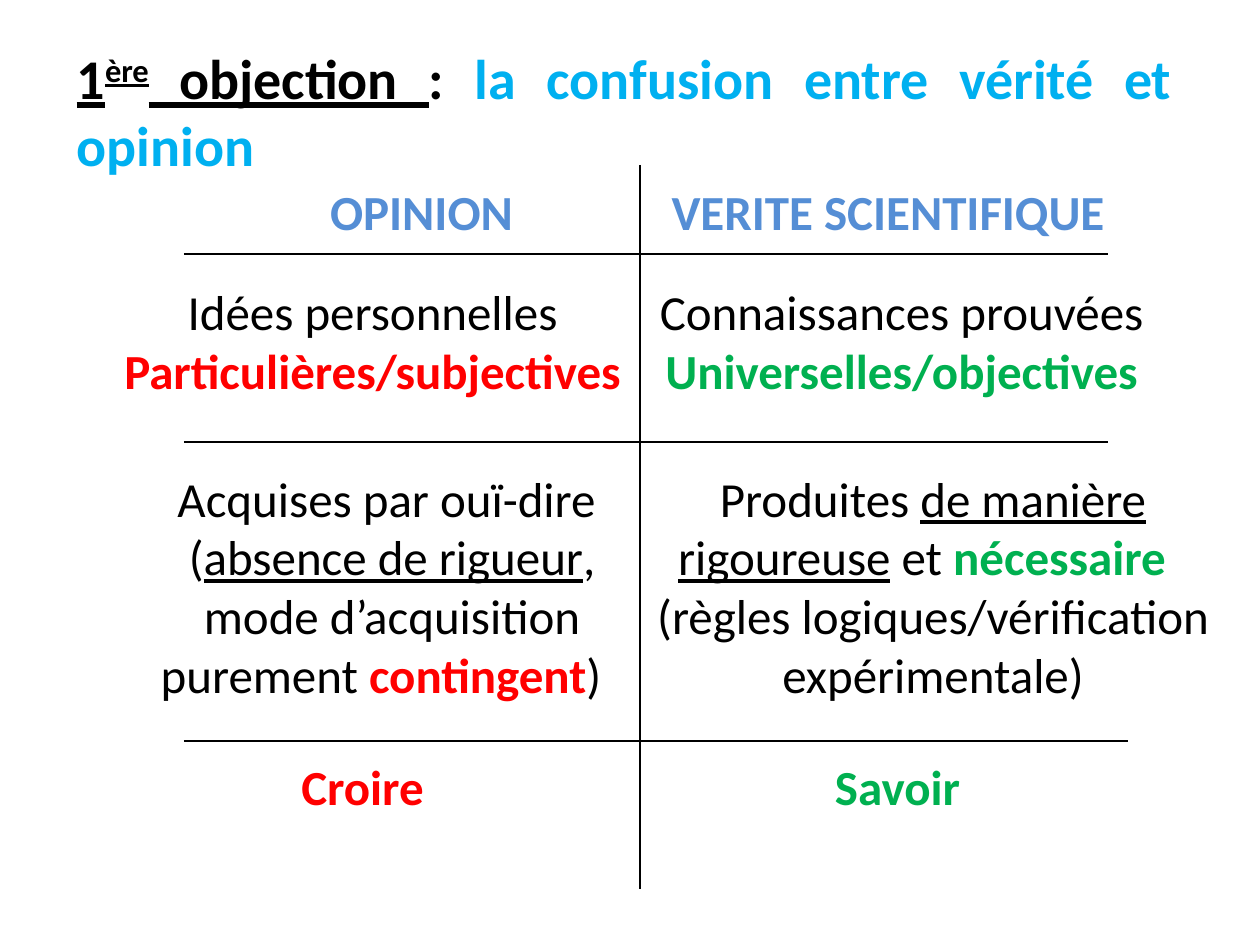
from dataclasses import dataclass

import pptx
import pptx.dml.color
import pptx.enum.shapes
import pptx.enum.text
import pptx.oxml
import pptx.oxml.ns
import pptx.util

EMU_PER_PX = 914400 / 126
AXIS = 640
LEFT_EDGE = 184
COLORS = {
    "ink": "000000",
    "heading": "558ED5",
    "topic": "00B0F0",
    "opinion": "FF0000",
    "truth": "00B050",
}
BOLD = {"bold": True}
UNDERLINE = {"underline": True}
TITLE_MARK = BOLD | UNDERLINE


@dataclass(frozen=True)
class Span:
    text: str
    color: str = "ink"
    format: dict | None = None
    baseline: int = 0


@dataclass(frozen=True)
class Cell:
    left: int
    top: int
    width: int
    height: int
    paragraphs: list[list[Span]]


@dataclass(frozen=True)
class Rule:
    start: tuple[int, int]
    end: tuple[int, int]


RULES = [
    Rule((AXIS, 165), (AXIS, 889)),
    Rule((LEFT_EDGE, 254), (1108, 254)),
    Rule((LEFT_EDGE, 442), (1108, 442)),
    Rule((LEFT_EDGE, 741), (1128, 741)),
]

TITLE = Cell(64, 37, 1121, 149, [[
    Span("1", format=TITLE_MARK),
    Span("ère", format=TITLE_MARK, baseline=30000),
    Span(" objection ", format=TITLE_MARK),
    Span(": ", format=BOLD),
    Span("la confusion entre vérité et opinion", "topic", BOLD),
]])

CELLS = [
    Cell(273, 175, 297, 72, [[Span("OPINION", "heading", BOLD)]]),
    Cell(AXIS, 175, 507, 72, [[Span("VERITE SCIENTIFIQUE ", "heading", BOLD)]]),
    Cell(105, 275, 535, 131, [
        [Span("Idées personnelles")],
        [Span("Particulières/subjectives", "opinion", BOLD)],
    ]),
    Cell(AXIS, 275, 523, 131, [
        [Span("Connaissances prouvées")],
        [Span(" "), Span("Universelles/objectives ", "truth", BOLD)],
    ]),
    Cell(144, 462, 496, 251, [
        [Span("Acquises par ouï-dire ")],
        [
            Span("("),
            Span("absence de rigueur", format=UNDERLINE),
            Span(", mode d’acquisition purement "),
            Span("contingent", "opinion", BOLD),
            Span(")  "),
        ],
    ]),
    Cell(AXIS, 462, 586, 251, [
        [
            Span("Produites "),
            Span("de manière rigoureuse", format=UNDERLINE),
            Span(" et "),
            Span("nécessaire  ", "truth", BOLD),
        ],
        [Span("(règles logiques/vérification expérimentale)")],
    ]),
    Cell(95, 750, 535, 131, [[Span("Croire", "opinion", BOLD)]]),
    Cell(AXIS, 750, 515, 131, [[Span("Savoir", "truth", BOLD)]]),
]


def px(value: int) -> int:
    return round(value * EMU_PER_PX)


def rgb(name: str) -> pptx.dml.color.RGBColor:
    return pptx.dml.color.RGBColor.from_string(COLORS[name])


def set_attributes(target, values: dict) -> None:
    for name, value in values.items():
        setattr(target, name, value)


def fill_text(shape, cell: Cell, size: int, alignment) -> None:
    frame = shape.text_frame
    set_attributes(frame, {
        "word_wrap": True,
        "auto_size": pptx.enum.text.MSO_AUTO_SIZE.NONE,
        "vertical_anchor": pptx.enum.text.MSO_ANCHOR.TOP,
    })
    for index, spans in enumerate(cell.paragraphs):
        paragraph = frame.add_paragraph() if index else frame.paragraphs[0]
        paragraph.alignment = alignment
        for span in spans:
            run = paragraph.add_run()
            run.text = span.text
            base = {"name": "Calibri", "size": pptx.util.Pt(size), "bold": False}
            set_attributes(run.font, base | (span.format or {}))
            run.font.color.rgb = rgb(span.color)
            if span.baseline:
                run.font._element.set("baseline", str(span.baseline))


def draw_title(slide, cell: Cell) -> None:
    shape = slide.shapes.title
    set_attributes(shape, {
        name: px(getattr(cell, name)) for name in ("left", "top", "width", "height")
    })
    fill_text(shape, cell, 32, pptx.enum.text.PP_ALIGN.JUSTIFY)


def draw_cell(slide, cell: Cell) -> None:
    shape = slide.shapes.add_textbox(
        px(cell.left), px(cell.top), px(cell.width), px(cell.height)
    )
    fill_text(shape, cell, 28, pptx.enum.text.PP_ALIGN.CENTER)


def draw_rule(slide, rule: Rule) -> None:
    connector = slide.shapes.add_connector(
        pptx.enum.shapes.MSO_CONNECTOR.STRAIGHT,
        *map(px, rule.start + rule.end),
    )
    connector.line.color.rgb = rgb("ink")
    connector.line.width = pptx.util.Pt(0.75)
    properties = connector._element.spPr
    properties.append(pptx.oxml.parse_xml(
        f"<a:effectLst {pptx.oxml.ns.nsdecls('a')}/>"
    ))


def main() -> None:
    presentation = pptx.Presentation()
    presentation.slide_width = px(1260)
    presentation.slide_height = px(945)
    slide = presentation.slides.add_slide(presentation.slide_layouts[5])
    for rule in RULES:
        draw_rule(slide, rule)
    for cell in CELLS:
        draw_cell(slide, cell)
    draw_title(slide, TITLE)
    presentation.save("out.pptx")


if __name__ == "__main__":
    main()
